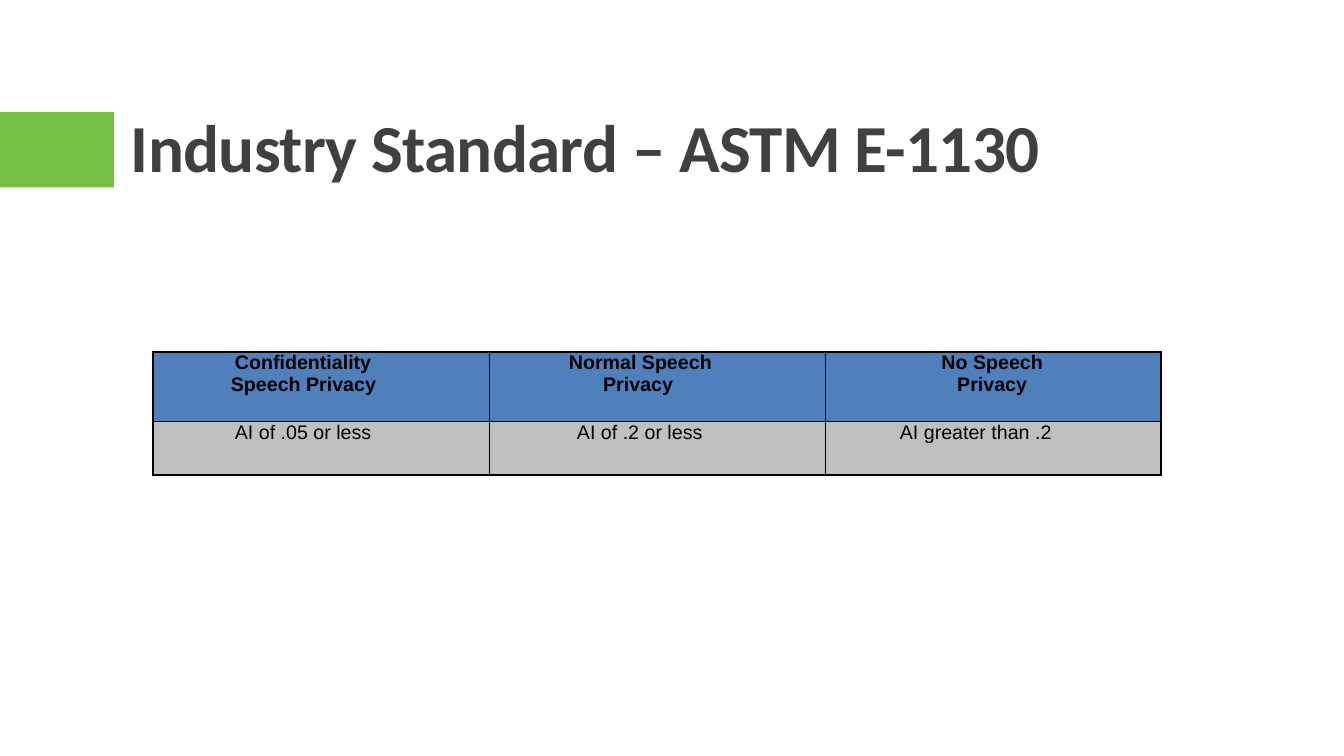
"""Build a slide with a title and a table of speech privacy levels."""
from lxml.etree import SubElement
from pptx import Presentation
from pptx.dml.color import RGBColor
from pptx.enum.shapes import MSO_SHAPE
from pptx.enum.text import MSO_ANCHOR, PP_ALIGN
from pptx.oxml.ns import qn
from pptx.util import Inches, Pt

GREEN = RGBColor(0x75, 0xC0, 0x44)
BLUE = RGBColor(0x4F, 0x80, 0xBC)
GREY = RGBColor(0xBF, 0xBF, 0xBF)
DARK = RGBColor(0x40, 0x40, 0x40)
BLACK = RGBColor(0, 0, 0)
THIN, THICK = Pt(0.69), Pt(1.55)

prs = Presentation()
prs.slide_width, prs.slide_height = Inches(13.33), Inches(7.5)
W, H = prs.slide_width, prs.slide_height
s = prs.slides.add_slide(prs.slide_layouts[6])


def add_border(cell, side, width):
    """Draw one solid black edge of a table cell."""
    ln = SubElement(cell._tc.get_or_add_tcPr(), qn(f"a:ln{side}"), w=str(width))
    fill = SubElement(ln, qn("a:solidFill"))
    SubElement(fill, qn("a:srgbClr"), val=str(BLACK))


accent = s.shapes.add_shape(MSO_SHAPE.RECTANGLE, 0, Inches(1.11), Inches(1.13), H // 10)
accent.shadow.inherit = False
accent.fill.solid()
accent.fill.fore_color.rgb = GREEN
accent.line.fill.background()

title = s.shapes.add_textbox(Inches(1.2), Inches(0.31), Inches(11), Inches(1.59))
tf = title.text_frame
tf.word_wrap = True
tf.vertical_anchor = MSO_ANCHOR.BOTTOM
p = tf.paragraphs[0]
p.line_spacing = 0.9
r = p.add_run()
r.text = "Industry Standard – ASTM E-1130"
r._r.get_or_add_rPr().set("spc", "-50")
p.font.name, p.font.size, p.font.bold = "Calibri", Pt(48), True
p.font.color.rgb = DARK

rows = [
    (0.69, BLUE, True, 1.0, [
        ("Confidentiality Speech Privacy", 0.77, 0.04, PP_ALIGN.LEFT),
        ("Normal Speech Privacy", 1.13, -0.34, PP_ALIGN.LEFT),
        ("No Speech Privacy", 0.98, 0, PP_ALIGN.CENTER),
    ]),
    (0.53, GREY, False, 0, [
        ("AI of .05 or less", 0.81, 0, PP_ALIGN.LEFT),
        ("AI of .2 or less", 0.87, 0, PP_ALIGN.LEFT),
        ("AI greater than .2", 0.74, 0, PP_ALIGN.LEFT),
    ]),
]
frame = s.shapes.add_table(2, 3, Inches(1.52), Inches(3.49), W * 3 // 4, Inches(1.22))
table = frame.table
for column in table.columns:
    column.width = W // 4

for i, (height, color, bold, right_indent, entries) in enumerate(rows):
    table.rows[i].height = Inches(height)
    for j, (text, left, first, align) in enumerate(entries):
        cell = table.cell(i, j)
        cell.margin_left = cell.margin_right = cell.margin_top = cell.margin_bottom = 0
        for side, outer in (("L", j == 0), ("R", j == 2), ("T", i == 0), ("B", i == 1)):
            add_border(cell, side, THICK if outer else THIN)
        cell.fill.solid()
        cell.fill.fore_color.rgb = color
        p = cell.text_frame.paragraphs[0]
        p.text = text
        p.alignment = align
        pPr = p._p.get_or_add_pPr()
        pPr.set("marL", str(Inches(left)))
        pPr.set("marR", str(Inches(right_indent)))
        pPr.set("indent", str(Inches(first)))
        p.font.name, p.font.size, p.font.bold = "Arial", Pt(14), bold
        p.font.color.rgb = BLACK

prs.save("out.pptx")
